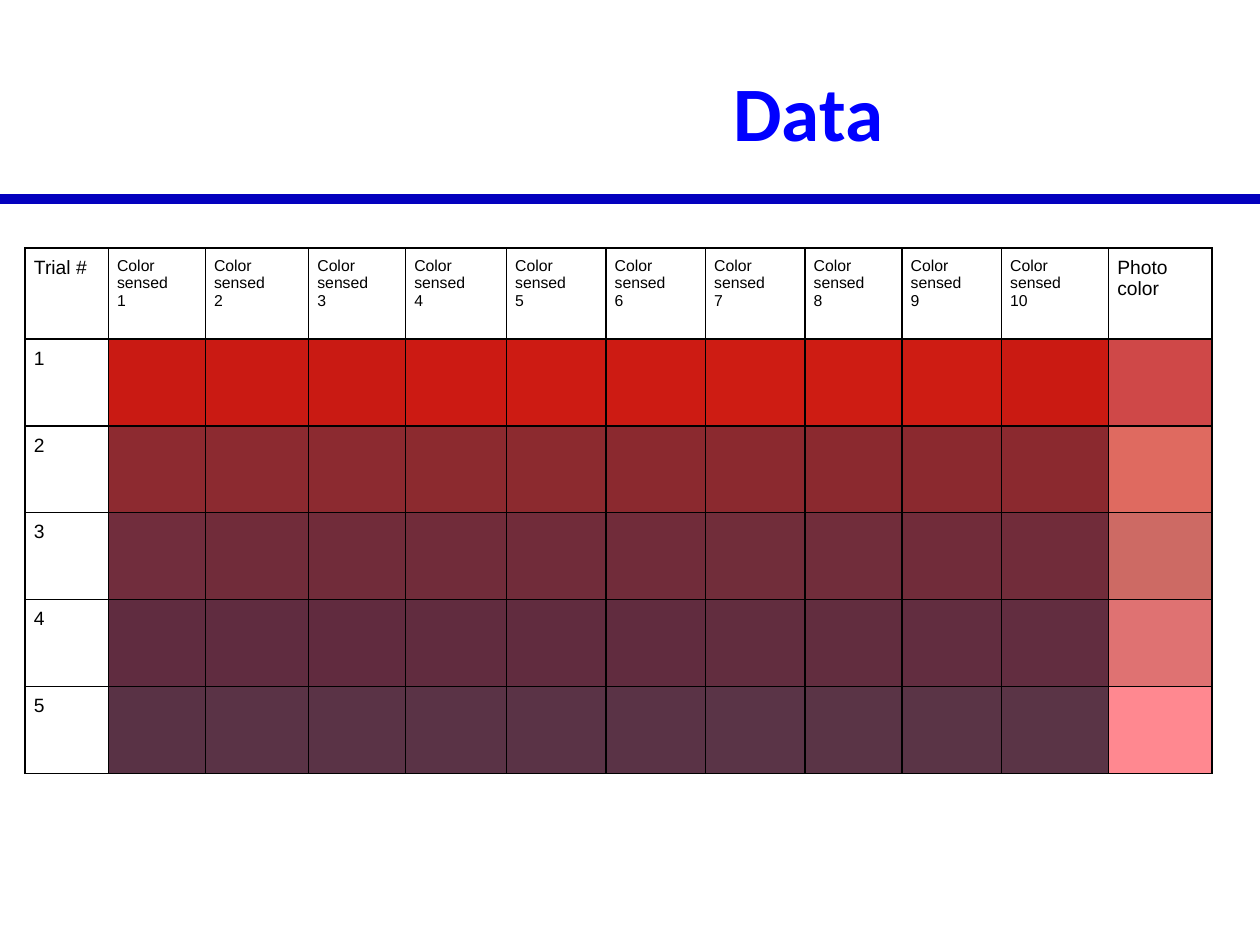
import pptx
import pptx.dml.color
import pptx.enum.shapes
import pptx.enum.text
import pptx.oxml
import pptx.oxml.ns
import pptx.util

TITLE = "Data"
SENSOR_COUNT = 10
HEADERS = (
    ["Trial #"]
    + [f"Color sensed\n{number}" for number in range(1, SENSOR_COUNT + 1)]
    + ["Photo color"]
)
# One row per trial: ten sensed colours, then the photo colour.
TRIALS = [
    "C91A13 CA1A13 C91A13 CC1A13 CD1B13 CD1B13 CE1C13 CE1C13 CE1C13 CA1A12 CF4848",
    "8D2A30 8C2A30 8C2A30 8C2A2F 8C2A2F 8B292F 8B292F 8B292F 8B292F 8B292F DF6A60",
    "712D3D 712C3A 712C3A 712C3A 712C3A 712C3A 712D3A 712D3B 712C3A 712C3A CD6A64",
    "602C40 602C40 612B3F 612C3F 612C3F 612C3F 622D3F 622D3F 622D40 622D40 DF7272",
    "593245 5A3346 5A3346 5A3346 5A3346 5A3346 5A3447 5A3446 5A3446 5A3446 FF8890",
]

THEME = {
    "title": {"name": "Calibri", "size": 44, "bold": True, "color": "0000FF"},
    "label": {"name": "Arial", "size": 11, "bold": False, "color": "000000"},
    "sensor": {"name": "Arial", "size": 9, "bold": False, "color": "000000"},
    "rule": {"color": "0300BE", "width": 6},
    "border": {"color": "000000", "width": 1},
}

SLIDE_WIDTH, SLIDE_HEIGHT = 10, 7.5
RULE_TOP = 1.58
TITLE_BOX = (3.08, 0.25, 6.67, 1.25)
TABLE_LEFT, TABLE_TOP = 0.2, 1.97
COLUMN_WIDTHS = [0.66, 0.77, 0.82, 0.77, 0.8, 0.79, 0.79, 0.79, 0.77, 0.79, 0.85, 0.82]
ROW_HEIGHTS = [0.72] + [0.69] * len(TRIALS)
SIDES = ("left", "right", "top", "bottom")

inches = pptx.util.Inches
rgb = pptx.dml.color.RGBColor.from_string


def set_margins(target, margin):
    for side in SIDES:
        setattr(target, f"margin_{side}", inches(margin))


def write(frame, text, style):
    """Fill a text frame, one paragraph per line of text."""
    frame.text = text
    for para in frame.paragraphs:
        for span in para.runs:
            values = {**THEME[style], "size": pptx.util.Pt(THEME[style]["size"])}
            span.font.color.rgb = rgb(values.pop("color"))
            for name, value in values.items():
                setattr(span.font, name, value)


def add_borders(cell):
    properties = cell._tc.get_or_add_tcPr()
    width = pptx.util.Pt(THEME["border"]["width"])
    for position, side in enumerate(SIDES):
        border = pptx.oxml.parse_xml(
            f'<a:ln{side[0].upper()} {pptx.oxml.ns.nsdecls("a")} w="{width}">'
            f'<a:solidFill><a:srgbClr val="{THEME["border"]["color"]}"/></a:solidFill>'
            f"</a:ln{side[0].upper()}>"
        )
        properties.insert(position, border)


def add_title(page):
    rule = page.shapes.add_connector(
        pptx.enum.shapes.MSO_CONNECTOR.STRAIGHT,
        0, inches(RULE_TOP), inches(SLIDE_WIDTH), inches(RULE_TOP),
    )
    rule.line.color.rgb = rgb(THEME["rule"]["color"])
    rule.line.width = pptx.util.Pt(THEME["rule"]["width"])
    rule._element.spPr.append(
        pptx.oxml.parse_xml(f'<a:effectLst {pptx.oxml.ns.nsdecls("a")}/>')
    )

    frame = page.shapes.add_textbox(*map(inches, TITLE_BOX)).text_frame
    frame.word_wrap = True
    frame.vertical_anchor = pptx.enum.text.MSO_ANCHOR.MIDDLE
    set_margins(frame, 0.1)
    write(frame, TITLE, "title")
    frame.paragraphs[0].alignment = pptx.enum.text.PP_ALIGN.CENTER


def add_trials(page):
    table = page.shapes.add_table(
        len(ROW_HEIGHTS), len(COLUMN_WIDTHS),
        inches(TABLE_LEFT), inches(TABLE_TOP),
        inches(sum(COLUMN_WIDTHS)), inches(sum(ROW_HEIGHTS)),
    ).table
    table.first_row = table.horz_banding = False
    for column, width in zip(table.columns, COLUMN_WIDTHS):
        column.width = inches(width)
    for row, height in zip(table.rows, ROW_HEIGHTS):
        row.height = inches(height)

    for cell in table.iter_cells():
        set_margins(cell, 0.07)
        cell.fill.background()
        add_borders(cell)
    for index, header in enumerate(HEADERS):
        style = "sensor" if 1 <= index <= SENSOR_COUNT else "label"
        write(table.cell(0, index).text_frame, header, style)
    for trial, colors in enumerate(TRIALS, start=1):
        write(table.cell(trial, 0).text_frame, str(trial), "label")
        for index, color in enumerate(colors.split(), start=1):
            fill = table.cell(trial, index).fill
            fill.solid()
            fill.fore_color.rgb = rgb(color)


def main():
    deck = pptx.Presentation()
    deck.slide_width, deck.slide_height = inches(SLIDE_WIDTH), inches(SLIDE_HEIGHT)
    page = deck.slides.add_slide(deck.slide_layouts[6])
    add_title(page)
    add_trials(page)
    deck.save("out.pptx")


if __name__ == "__main__":
    main()
